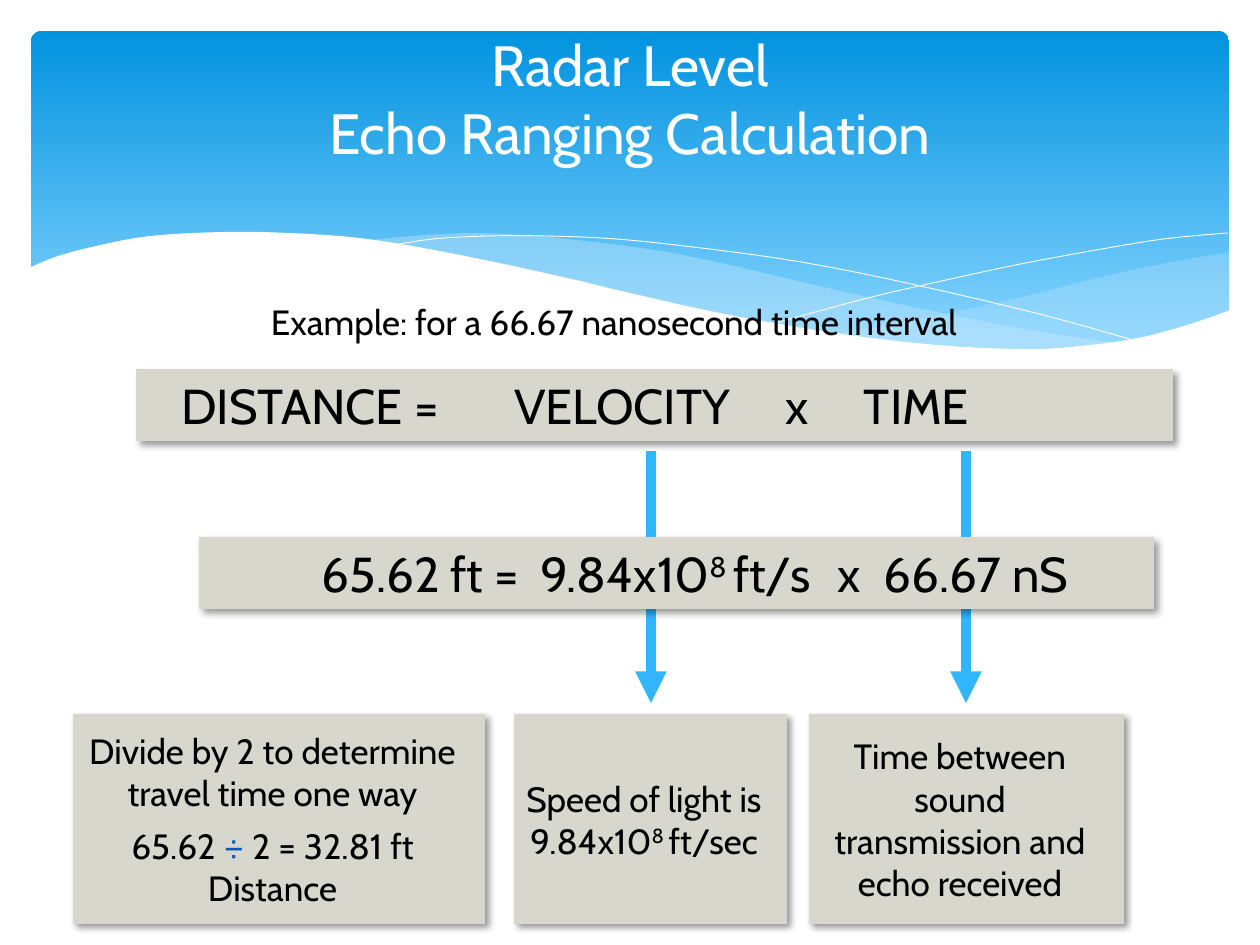
from dataclasses import dataclass
from lxml.etree import SubElement as Sub
from pptx import Presentation
from pptx.dml.color import RGBColor as Rgb
from pptx.enum.shapes import MSO_CONNECTOR as Conn, MSO_SHAPE as Kind
from pptx.enum.text import MSO_ANCHOR as Anchor, MSO_AUTO_SIZE as Fit, PP_ALIGN as Align
from pptx.oxml.ns import qn
from pptx.util import Pt

PX = 914400 / 126


@dataclass(frozen=True)
class Theme:
    """Colours, font and type sizes of the slide."""
    font: str = "Cabin"
    head: float = 32.4
    big: int = 28
    small: int = 20
    ink: str = "000000"
    white: str = "FFFFFF"
    box: str = "D7D7CD"
    arrow: str = "31B6FD"
    mark: str = "0A56BB"
    wave: str = "C6E7FC"
    top: str = "0293E0"
    base: str = "83D3FE"


T = Theme()
MASK = [(1231, 310), (1184, 326), (1133, 339), (1071, 347), (1019, 349), (937, 345),
        (842, 334), (730, 315), (634, 294), (563, 277), (460, 255), (368, 239), (290, 233),
        (223, 232), (150, 236), (96, 246), (58, 256), (29, 268)]
FLOOR = [(29, 415), (1231, 415)]
RIGHT = ([(1230, 252), (1178, 261), (1123, 272), (1085, 281), (1014, 299), (919, 319),
          (833, 334)],
         [(833, 334), (888, 341), (954, 348), (1012, 350), (1076, 348), (1130, 340),
          (1178, 330), (1230, 311)])
MID = ([(1125, 344), (1055, 334), (977, 320), (890, 302), (793, 280), (717, 262),
        (648, 249), (557, 238), (479, 233), (413, 236), (360, 241)],
       [(360, 241), (431, 251), (509, 266), (566, 280), (668, 302), (757, 321), (857, 338),
        (942, 348), (1003, 350), (1068, 349), (1125, 344)])
FALL = [(389, 246), (433, 239), (488, 236), (546, 236), (616, 239), (701, 248), (801, 262),
        (916, 285), (1047, 316), (1143, 343)]
RISE = [(772, 324), (823, 310), (876, 296), (942, 281), (1016, 265), (1091, 251),
        (1164, 239), (1228, 233)]


def emu(*vals):
    """Turn px lengths into EMU."""
    return [round(v * PX) for v in vals]


def tint(fill, hue, alpha=100):
    """Fill with one colour at an opacity in percent."""
    fill.solid()
    fill.fore_color.rgb = Rgb.from_string(hue)
    if alpha < 100:
        clr = fill._xPr.find(qn("a:solidFill"))[0]
        Sub(clr, qn("a:alpha"), val=str(alpha * 1000))


def smooth(pts, steps=4):
    """Sample a Catmull-Rom curve through the points."""
    ends = [pts[0], *pts, pts[-1]]
    out = [pts[0]]
    for a, b, c, d in zip(ends, ends[1:], ends[2:], ends[3:]):
        for i in range(1, steps + 1):
            t = i / steps
            out.append(tuple(
                (2 * q + (r - p) * t + (2 * p - 5 * q + 4 * r - s) * t ** 2
                 + (3 * q - p - 3 * r + s) * t ** 3) / 2
                for p, q, r, s in zip(a, b, c, d)))
    return out


def trace(shapes, pts, close):
    """Draw an outline through px points."""
    fine = [(round(x * 10), round(y * 10)) for x, y in pts]
    pen = shapes.build_freeform(*fine[0], scale=PX / 10)
    pen.add_line_segments(fine[1:], close=close)
    shape = pen.convert_to_shape()
    shape.shadow.inherit = False
    return shape


def band(shapes, pts, hue, alpha=100):
    """Draw a filled wave."""
    shape = trace(shapes, pts, True)
    tint(shape.fill, hue, alpha)
    shape.line.fill.background()


def curve(shapes, pts):
    """Draw a thin white curve."""
    shape = trace(shapes, smooth(pts), False)
    shape.fill.background()
    tint(shape.line.fill, T.white)
    shape.line.width = Pt(0.5)


def sky(shapes):
    """Draw the rounded gradient panel."""
    shape = shapes.add_shape(Kind.ROUNDED_RECTANGLE, *emu(31, 31, 1198, 340))
    shape.adjustments[0] = 0.03
    shape.shadow.inherit = False
    shape.line.fill.background()
    shape.fill.gradient()
    shape.fill.gradient_angle = 270
    for stop, hue, pos in zip(shape.fill.gradient_stops, (T.top, T.base), (0, 0.9)):
        stop.color.rgb = Rgb.from_string(hue)
        stop.position = pos


def scene(shapes):
    """Draw the panel and its waves."""
    sky(shapes)
    for (top, low), alpha in ((RIGHT, 29), (MID, 40)):
        band(shapes, smooth(top) + smooth(low), T.wave, alpha)
    curve(shapes, FALL)
    curve(shapes, RISE)
    band(shapes, smooth(MASK) + FLOOR, T.white)


def style(para, size, hue=T.ink, align=Align.CENTER):
    """Set the font and alignment of a paragraph."""
    para.alignment = align
    font = para.font
    font.name, font.size = T.font, Pt(size)
    font.color.rgb = Rgb.from_string(hue)


def write(para, parts):
    """Add runs, each a text with an optional mark."""
    for text, mark in parts:
        run = para.add_run()
        run.text = text
        if mark == "sup":
            run.font._element.set("baseline", "30000")
        elif mark:
            run.font.color.rgb = Rgb.from_string(mark)


def panel(shapes, at, left=0):
    """Draw a shadowed box and return its text frame."""
    shape = shapes.add_shape(Kind.RECTANGLE, *emu(*at))
    tint(shape.fill, T.box)
    shape.line.fill.background()
    shape.shadow.inherit = False
    glow = Sub(shape._element.spPr.find(qn("a:effectLst")), qn("a:outerShdw"),
               blurRad="50800", dist="38100", dir="2700000", algn="tl", rotWithShape="0")
    Sub(Sub(glow, qn("a:srgbClr"), val=T.ink), qn("a:alpha"), val="40000")
    frame = shape.text_frame
    frame.word_wrap = True
    frame.vertical_anchor = Anchor.MIDDLE
    frame.margin_left, frame.margin_right = emu(left, 13)
    frame.margin_top, frame.margin_bottom = emu(6, 6)
    return frame


def bar(shapes, at, left, stops, parts):
    """Draw a formula bar whose terms sit on tab stops."""
    para = panel(shapes, at, left).paragraphs[0]
    tabs = Sub(para._p.get_or_add_pPr(), qn("a:tabLst"))
    for pos in emu(*stops):
        Sub(tabs, qn("a:tab"), pos=str(pos), algn="l")
    style(para, T.big, align=Align.LEFT)
    write(para, parts)


def note(shapes, at, *lines):
    """Draw a box of centred paragraphs."""
    frame = panel(shapes, at)
    for i, parts in enumerate(lines):
        para = frame.add_paragraph() if i else frame.paragraphs[0]
        style(para, T.small)
        if i:
            para.space_before = Pt(6)
        if isinstance(parts, str):
            para.text = parts
        else:
            write(para, parts)


def arrow(shapes, x):
    """Draw a thick arrow pointing down."""
    line = shapes.add_connector(Conn.STRAIGHT, *emu(x, 451, x, 703))
    tint(line.line.fill, T.arrow)
    line.line.width = Pt(6)
    Sub(line.line._get_or_add_ln(), qn("a:tailEnd"), type="triangle")
    Sub(line._element.spPr, qn("a:effectLst"))


def label(shape, at, text, size, hue):
    """Place a shape and set its one centred paragraph."""
    shape.left, shape.top, shape.width, shape.height = emu(*at)
    frame = shape.text_frame
    frame.word_wrap, frame.auto_size = True, Fit.NONE
    frame.text = text
    style(frame.paragraphs[0], size, hue)


def main():
    """Build the slide and save it."""
    deck = Presentation()
    deck.slide_width, deck.slide_height = emu(1260, 945)
    slide = deck.slides.add_slide(deck.slide_layouts[5])
    shapes = slide.shapes
    title = shapes.title
    scene(shapes)
    for x in (651, 966):
        arrow(shapes, x)
    shapes._spTree.append(title._element)
    label(title, (0, 21, 1260, 153), "Radar Level\vEcho Ranging Calculation", T.head, T.white)
    bar(shapes, (136, 369, 1037, 72), 45, (333, 604, 683),
        [("DISTANCE =\tVELOCITY\tx\tTIME", None)])
    note(shapes, (514, 714, 273, 210),
         [("Speed of light is 9.84x10", None), ("8 ", "sup"), ("ft/sec", None)])
    note(shapes, (809, 714, 315, 210), "Time between sound\vtransmission and echo received")
    bar(shapes, (199, 537, 955, 72), 123, (218, 516, 562),
        [("65.62 ft =\t9.84x10", None), ("8 ", "sup"), ("ft/s\tx\t66.67 nS", None)])
    note(shapes, (73, 714, 412, 210), "Divide by 2 to determine travel time one way",
         [("65.62 ", None), ("÷ ", T.mark), ("2 = 32.81 ft Distance", None)])
    label(shapes.add_textbox(0, 0, 0, 0), (0, 294, 1228, 55),
          "Example: for a 66.67 nanosecond time interval", T.small, T.ink)
    deck.save("out.pptx")


if __name__ == "__main__":
    main()
